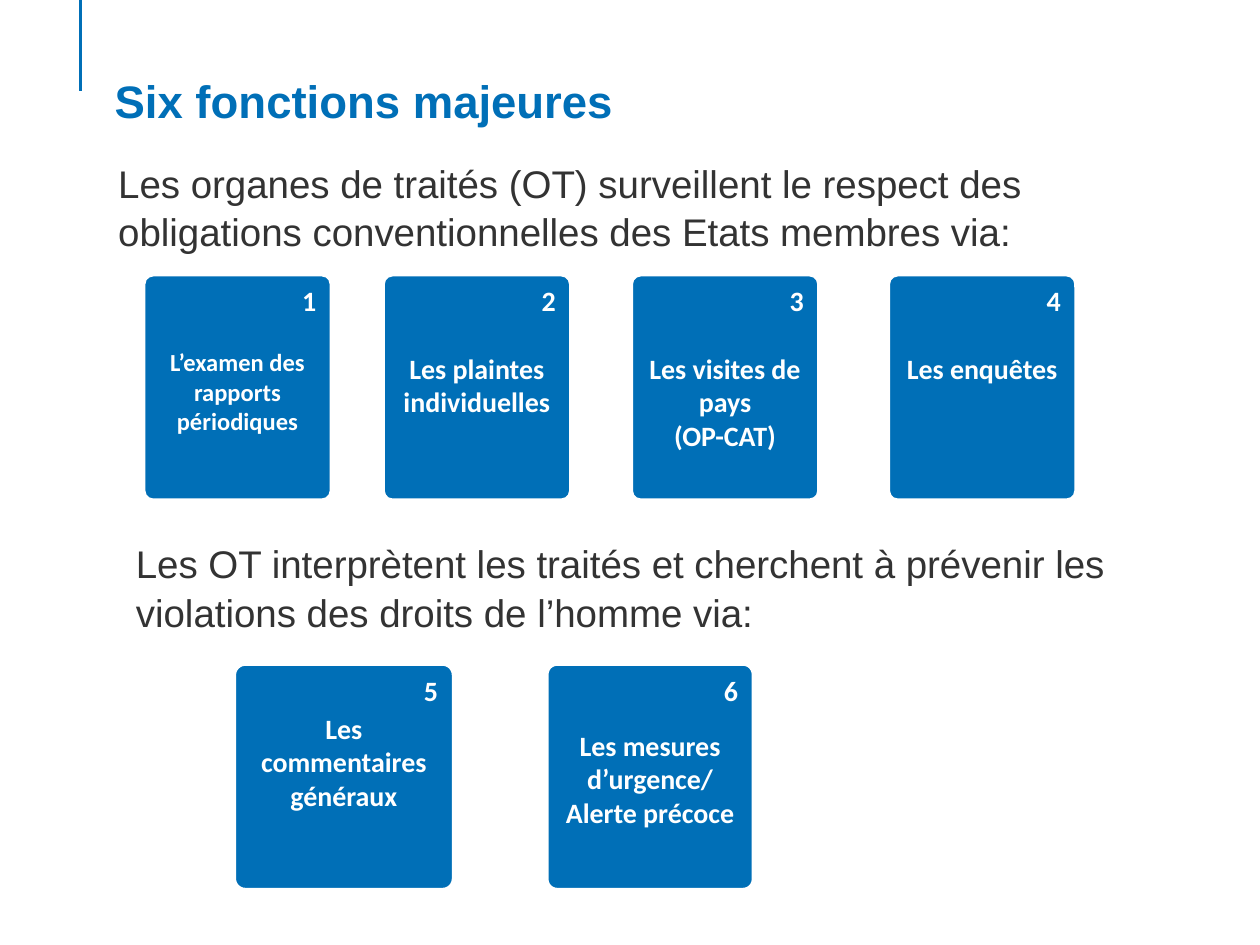
"""Build the slide on the six functions of the treaty bodies."""
import dataclasses

import lxml.etree
import pptx
import pptx.dml.color
import pptx.enum.shapes
import pptx.enum.text
import pptx.oxml.ns
import pptx.util

Inches = pptx.util.Inches
Pt = pptx.util.Pt
ALIGN = pptx.enum.text.PP_ALIGN
ANCHOR = pptx.enum.text.MSO_ANCHOR


@dataclasses.dataclass(frozen=True)
class Theme:
    blue: str = "006FB7"
    ink: str = "333333"
    white: str = "FFFFFF"
    text_font: str = "Arial"
    card_font: str = "Calibri"
    title_size: int = 26
    intro_size: int = 22
    card_size: int = 16
    small_size: int = 14
    rule_width: int = 2


THEME = Theme()
TITLE = "Six fonctions majeures"
TITLE_BOX = (0.81, 0.52, 8.27, 0.55)
CARD_HEIGHT = 1.79
LINE_HEIGHT = 1.22

SECTIONS = [
    {
        "intro": "Les organes de traités (OT) surveillent le respect des "
                 "obligations conventionnelles des Etats membres via:",
        "box": (0.84, 1.2, 8.03, 0.84),
        "cards_top": 2.18,
        "cards": [
            {"left": 1.14, "width": 1.49, "gap": 14, "size": THEME.small_size,
             "lines": ["L’examen des rapports périodiques"]},
            {"left": 3.04, "width": 1.49, "gap": 16,
             "lines": ["Les plaintes individuelles"]},
            {"left": 5.01, "width": 1.49, "gap": 16,
             "lines": ["Les visites de pays", "(OP-CAT)"]},
            {"left": 7.05, "width": 1.49, "gap": 16,
             "lines": ["Les enquêtes"]},
        ],
    },
    {
        "intro": "Les OT interprètent les traités et cherchent à prévenir les "
                 "violations des droits de l’homme via:",
        "box": (0.98, 4.22, 7.95, 0.84),
        "cards_top": 5.27,
        "cards": [
            {"left": 1.86, "width": 1.74, "gap": 2,
             "lines": ["Les commentaires généraux"]},
            {"left": 4.34, "width": 1.64, "gap": 10,
             "lines": ["Les mesures d’urgence/ Alerte précoce"]},
        ],
    },
]


def rgb(value):
    """Return a colour object for a hex value."""
    return pptx.dml.color.RGBColor.from_string(value)


def write(paragraph, text, *, size, color, font=THEME.text_font, bold=False,
          align=ALIGN.LEFT, before=0, spacing=1.0):
    """Write formatted text into a paragraph."""
    paragraph.text = text
    paragraph.alignment = align
    paragraph.line_spacing = spacing
    paragraph.space_before = Pt(before)
    paragraph.font.size = Pt(size)
    paragraph.font.name = font
    paragraph.font.bold = bold
    paragraph.font.color.rgb = rgb(color)


def add_rule(slide):
    """Draw the vertical accent line at the top edge."""
    rule = slide.shapes.add_connector(
        pptx.enum.shapes.MSO_CONNECTOR.STRAIGHT,
        Inches(0.64), Inches(0), Inches(0.64), Inches(0.72))
    rule.line.color.rgb = rgb(THEME.blue)
    rule.line.width = Pt(THEME.rule_width)
    lxml.etree.SubElement(rule._element.spPr, pptx.oxml.ns.qn("a:effectLst"))


def set_title(slide):
    """Place and format the title."""
    title = slide.shapes.title
    title.left, title.top, title.width, title.height = map(Inches, TITLE_BOX)
    frame = title.text_frame
    frame.auto_size = pptx.enum.text.MSO_AUTO_SIZE.NONE
    frame.vertical_anchor = ANCHOR.MIDDLE
    write(frame.paragraphs[0], TITLE, size=THEME.title_size,
          color=THEME.blue, bold=True)


def add_intro(slide, text, box):
    """Add the sentence that introduces a row of cards."""
    frame = slide.shapes.add_textbox(*map(Inches, box)).text_frame
    frame.word_wrap = True
    write(frame.paragraphs[0], text, size=THEME.intro_size, color=THEME.ink,
          spacing=1.05)


def add_card(slide, number, top, card):
    """Add one numbered card."""
    shape = slide.shapes.add_shape(
        pptx.enum.shapes.MSO_SHAPE.ROUNDED_RECTANGLE, Inches(card["left"]),
        Inches(top), Inches(card["width"]), Inches(CARD_HEIGHT))
    shape.adjustments[0] = 0.05
    shape.shadow.inherit = False
    shape.fill.solid()
    shape.fill.fore_color.rgb = rgb(THEME.blue)
    shape.line.color.rgb = rgb(THEME.white)
    shape.line.width = Pt(THEME.rule_width)
    frame = shape.text_frame
    frame.word_wrap = True
    frame.vertical_anchor = ANCHOR.TOP
    style = {"font": THEME.card_font, "color": THEME.white, "bold": True}
    write(frame.paragraphs[0], str(number), size=THEME.card_size,
          align=ALIGN.RIGHT, **style)
    for index, line in enumerate(card["lines"]):
        write(frame.add_paragraph(), line,
              size=card.get("size", THEME.card_size), align=ALIGN.CENTER,
              before=0 if index else round(card["gap"] * LINE_HEIGHT, 1),
              **style)


def main():
    """Build and save the slide."""
    deck = pptx.Presentation()
    deck.slide_width, deck.slide_height = Inches(10), Inches(7.5)
    slide = deck.slides.add_slide(deck.slide_layouts[5])
    add_rule(slide)
    set_title(slide)
    number = 0
    for section in SECTIONS:
        add_intro(slide, section["intro"], section["box"])
        for number, card in enumerate(section["cards"], number + 1):
            add_card(slide, number, section["cards_top"], card)
    deck.save("out.pptx")


if __name__ == "__main__":
    main()
